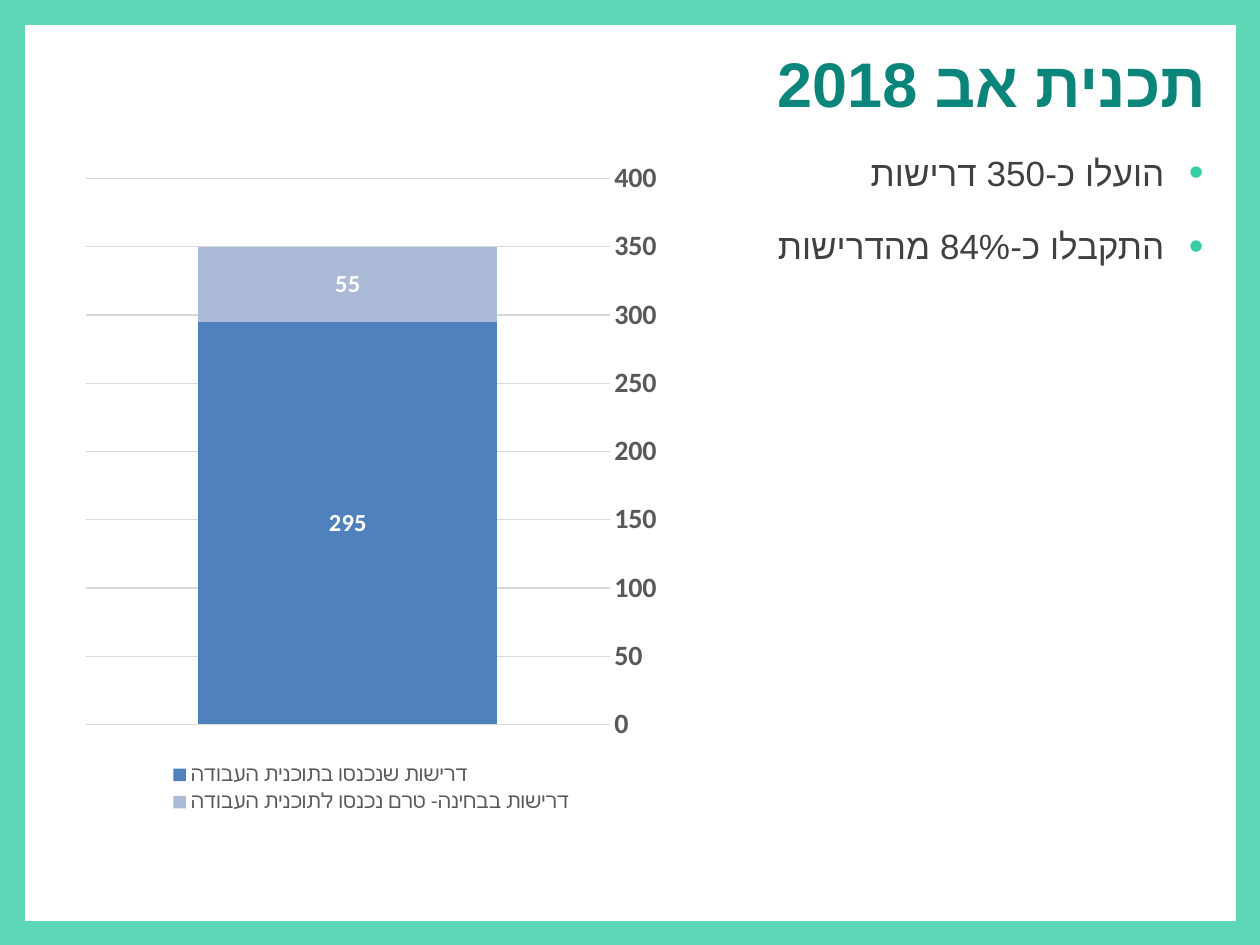
from dataclasses import dataclass

from lxml import etree
from pptx import Presentation
from pptx.chart.data import CategoryChartData
from pptx.dml.color import RGBColor
from pptx.enum.chart import XL_CHART_TYPE, XL_LABEL_POSITION, XL_LEGEND_POSITION, XL_TICK_MARK
from pptx.enum.shapes import MSO_SHAPE
from pptx.enum.text import MSO_ANCHOR, PP_ALIGN
from pptx.oxml.ns import qn
from pptx.util import Inches, Pt

RECT = MSO_SHAPE.RECTANGLE
STACKED = XL_CHART_TYPE.COLUMN_STACKED
CENTER = XL_LABEL_POSITION.CENTER
BOTTOM = XL_LEGEND_POSITION.BOTTOM
NO_TICK = XL_TICK_MARK.NONE
RIGHT = PP_ALIGN.RIGHT
TOP, MIDDLE = MSO_ANCHOR.TOP, MSO_ANCHOR.MIDDLE

WIDTH, HEIGHT = 10, 7.5


@dataclass(frozen=True)
class Theme:
    frame: str = "5DD7B6"
    page: str = "FFFFFF"
    title: str = "0B847A"
    body: str = "404040"
    bullet: str = "37CDA6"
    axis: str = "595959"
    grid: str = "D9D9D9"
    series: tuple = ("4F81BD", "AABAD7")
    title_font: str = "Roboto"
    body_font: str = "Calibri"
    hebrew_font: str = "Arial"
    title_size: int = 36
    body_size: int = 20
    axis_size: int = 16
    label_size: int = 14
    legend_size: int = 12
    chart_size: int = 10


THEME = Theme()


def rgb(value):
    return RGBColor.from_string(value)


def style_font(font, name, size, color, bold=False):
    font.name, font.size, font.bold = name, Pt(size), bold
    font.color.rgb = rgb(color)


def add_rect(s, box, color):
    sp = s.shapes.add_shape(RECT, *map(Inches, box))
    sp.shadow.inherit = False
    sp.fill.solid()
    sp.fill.fore_color.rgb = rgb(color)
    sp.line.fill.background()


def add_frame(s, box):
    """Coloured border: a full rectangle with the page laid over it."""
    x, y, w, h = box
    add_rect(s, box, THEME.frame)
    add_rect(s, (x + 0.2, y + 0.2, w - 0.39, h - 0.39), THEME.page)


def add_text_frame(s, box, anchor):
    tf = s.shapes.add_textbox(*map(Inches, box)).text_frame
    tf.word_wrap = True
    tf.vertical_anchor = anchor
    return tf


def write_rtl(p, text, name, size, color, bold=False):
    """Right-to-left paragraph with a separate font for Hebrew script."""
    p.text = text
    p.alignment = RIGHT
    p._p.get_or_add_pPr().set("rtl", "1")
    r = p.runs[0]
    style_font(r.font, name, size, color, bold)
    rPr = r._r.get_or_add_rPr()
    rPr.set("lang", "he-IL")
    etree.SubElement(rPr, qn("a:cs"), typeface=THEME.hebrew_font)


def add_bullet(p, indent):
    pPr = p._p.get_or_add_pPr()
    pPr.set("marL", str(Inches(indent)))
    pPr.set("indent", str(-Inches(indent)))
    color = etree.SubElement(pPr, qn("a:buClr"))
    etree.SubElement(color, qn("a:srgbClr"), val=THEME.bullet)
    etree.SubElement(pPr, qn("a:buSzPct"), val="120000")
    etree.SubElement(pPr, qn("a:buFont"), typeface="Arial")
    etree.SubElement(pPr, qn("a:buChar"), char="•")


def add_title(s, box, text):
    tf = add_text_frame(s, box, MIDDLE)
    tf.margin_left = tf.margin_top = tf.margin_bottom = 0
    tf.margin_right = Inches(0.08)
    p = tf.paragraphs[0]
    write_rtl(p, text, THEME.title_font, THEME.title_size, THEME.title, True)
    p.line_spacing = 0.9


def add_bullets(s, box, lines):
    tf = add_text_frame(s, box, TOP)
    for i, line in enumerate(lines):
        p = tf.add_paragraph() if i else tf.paragraphs[0]
        add_bullet(p, 0.31)
        write_rtl(p, line, THEME.body_font, THEME.body_size, THEME.body)
        p.line_spacing, p.space_after = Pt(30), Pt(12)


def set_layout(parent, box, before, inner=False):
    """Place a chart part by shares of the chart's size."""
    for old in parent.findall(qn("c:layout")):
        parent.remove(old)
    layout = etree.Element(qn("c:layout"))
    manual = etree.SubElement(layout, qn("c:manualLayout"))
    if inner:
        etree.SubElement(manual, qn("c:layoutTarget"), val="inner")
    for mode in ("xMode", "yMode"):
        etree.SubElement(manual, qn("c:" + mode), val="edge")
    for key, share in zip("xywh", box):
        etree.SubElement(manual, qn("c:" + key), val=str(share))
    parent.find(qn(before)).addprevious(layout)


def add_demand_chart(s, box, series):
    data = CategoryChartData()
    data.categories = ["1"]
    for name, value in series:
        data.add_series(name, [value])
    chart = s.shapes.add_chart(STACKED, *map(Inches, box), data).chart
    chart.has_title = False
    style_font(chart.font, THEME.body_font, THEME.chart_size, "000000")

    plot = chart.plots[0]
    plot.gap_width, plot.overlap, plot.vary_by_categories = 75, 100, False
    for ser, color in zip(plot.series, THEME.series):
        ser.format.fill.solid()
        ser.format.fill.fore_color.rgb = rgb(color)
        labels = ser.data_labels
        labels.show_value, labels.position = True, CENTER
        style_font(labels.font, THEME.body_font, THEME.label_size, THEME.page, True)

    chart.category_axis.reverse_order = True
    chart.category_axis.visible = False
    axis = chart.value_axis
    axis.minimum_scale, axis.maximum_scale, axis.major_unit = 0, 400, 50
    axis.major_tick_mark = axis.minor_tick_mark = NO_TICK
    axis.format.line.fill.background()
    grid = axis.major_gridlines.format.line
    grid.color.rgb, grid.width = rgb(THEME.grid), Pt(0.75)
    style_font(axis.tick_labels.font, THEME.body_font, THEME.axis_size, THEME.axis, True)

    chart.has_legend = True
    legend = chart.legend
    legend.position, legend.include_in_layout = BOTTOM, False
    style_font(legend.font, THEME.body_font, THEME.legend_size, THEME.axis)
    set_layout(plot._element.getparent(), (0.02, 0.05, 0.88, 0.81), "c:barChart", True)
    set_layout(legend._element, (0.16, 0.91, 0.68, 0.09), "c:overlay")


def main():
    prs = Presentation()
    prs.slide_width, prs.slide_height = Inches(WIDTH), Inches(HEIGHT)
    s = prs.slides.add_slide(prs.slide_layouts[6])
    left, top, width, title_height = 0.28, 0.31, 9.37, 0.76
    add_frame(s, (0, 0, WIDTH, HEIGHT))
    add_title(s, (left, top, width, title_height), "תכנית אב 2018")
    add_bullets(s, (left, top + title_height, width, 6.06),
                ["הועלו כ-350 דרישות", "התקבלו כ-84% מהדרישות"])
    add_demand_chart(s, (0.59, 1.15, 4.72, 5.35), [
        ("דרישות שנכנסו בתוכנית העבודה", 295),
        ("דרישות בבחינה- טרם נכנסו לתוכנית העבודה", 55),
    ])
    prs.save("out.pptx")


if __name__ == "__main__":
    main()
